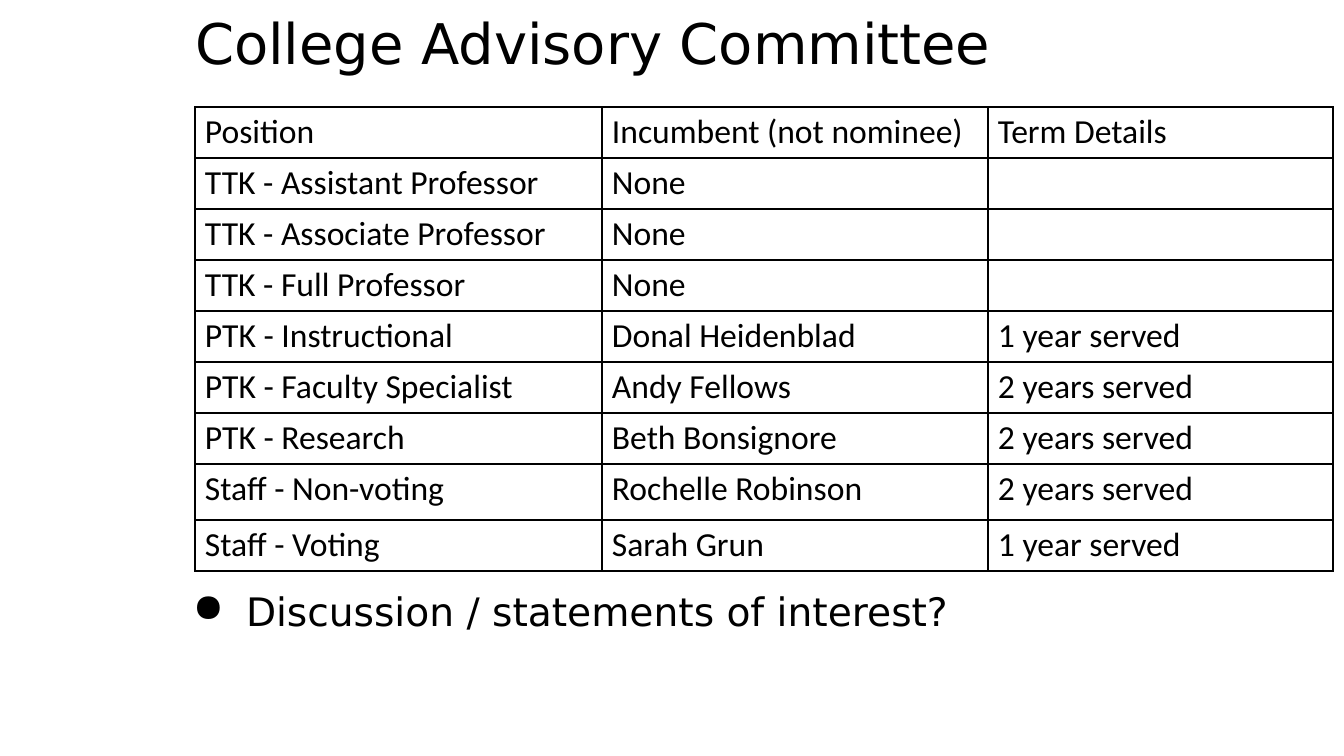
from lxml import etree
from pptx import Presentation
from pptx.dml.color import RGBColor
from pptx.enum.text import MSO_ANCHOR
from pptx.oxml.ns import qn
from pptx.util import Emu, Pt

MIDDLE, TOP = MSO_ANCHOR.MIDDLE, MSO_ANCHOR.TOP
EMU_PER_PX = 914400 / 100.8
COLORS = {"ink": "000000", "page": "FFFFFF"}


def px(length):
    return Emu(round(length * EMU_PER_PX))


def write(frame, text, font="Calibri", size=24, color="ink", anchor=TOP,
          inset=(10, 5), line_spacing=None, bullet=None, indent=(0, 0)):
    frame.word_wrap = True
    frame.vertical_anchor = anchor
    frame.margin_left = frame.margin_right = px(inset[0])
    frame.margin_top = frame.margin_bottom = px(inset[1])
    para = frame.paragraphs[0]
    if line_spacing:
        para.line_spacing = line_spacing
    if bullet:
        properties = para._p.get_or_add_pPr()
        properties.set("marL", str(px(indent[0])))
        properties.set("indent", str(px(indent[1])))
        bullet_color = etree.SubElement(properties, qn("a:buClr"))
        etree.SubElement(bullet_color, qn("a:srgbClr"), val=COLORS[color])
        etree.SubElement(properties, qn("a:buChar"), char=bullet)
    para.font.size = Pt(size)
    if text:
        span = para.add_run()
        span.text = text
        span.font.name = font
        span.font.size = Pt(size)
        span.font.color.rgb = RGBColor.from_string(COLORS[color])


deck = Presentation()
deck.slide_width, deck.slide_height = px(1344), px(756)
page = deck.slides.add_slide(deck.slide_layouts[6])
page.background.fill.solid()
page.background.fill.fore_color.rgb = RGBColor.from_string(COLORS["page"])

# Title
title = page.shapes.add_textbox(px(185), px(-27), px(1159), px(146))
write(title.text_frame, "College Advisory Committee", font="DejaVu Sans",
      size=40, anchor=MIDDLE, line_spacing=0.9)

# Committee table
ROWS = [
    ("Position", "Incumbent (not nominee)", "Term Details"),
    ("TTK - Assistant Professor", "None", ""),
    ("TTK - Associate Professor", "None", ""),
    ("TTK - Full Professor", "None", ""),
    ("PTK - Instructional", "Donal Heidenblad", "1 year served"),
    ("PTK - Faculty Specialist", "Andy Fellows", "2 years served"),
    ("PTK - Research", "Beth Bonsignore", "2 years served"),
    ("Staff - Non-voting", "Rochelle Robinson", "2 years served"),
    ("Staff - Voting", "Sarah Grun", "1 year served"),
]
COLUMN_WIDTHS = [407, 386, 345]
ROW_HEIGHTS = [51] * 7 + [56, 51]

table = page.shapes.add_table(
    len(ROWS), len(COLUMN_WIDTHS), px(195), px(107),
    px(sum(COLUMN_WIDTHS)), px(sum(ROW_HEIGHTS))).table
table.first_row = table.horz_banding = False
for column, width in zip(table.columns, COLUMN_WIDTHS):
    column.width = px(width)

for row, height, texts in zip(table.rows, ROW_HEIGHTS, ROWS):
    row.height = px(height)
    for cell, text in zip(row.cells, texts):
        write(cell.text_frame, text)
        cell.margin_left = cell.margin_right = px(10)
        cell.margin_top = cell.margin_bottom = px(5)
        cell_properties = cell._tc.get_or_add_tcPr()
        for side in ("lnL", "lnR", "lnT", "lnB"):
            border = etree.SubElement(cell_properties, qn(f"a:{side}"), w=str(Pt(1)))
            line_fill = etree.SubElement(border, qn("a:solidFill"))
            etree.SubElement(line_fill, qn("a:srgbClr"), val=COLORS["ink"])
        cell.fill.background()

# Discussion point
discussion = page.shapes.add_textbox(px(165), px(574), px(987), px(75))
write(discussion.text_frame, "Discussion / statements of interest?",
      font="DejaVu Sans", size=28, inset=(13, 13), bullet="●", indent=(68, -53))

deck.save("out.pptx")
